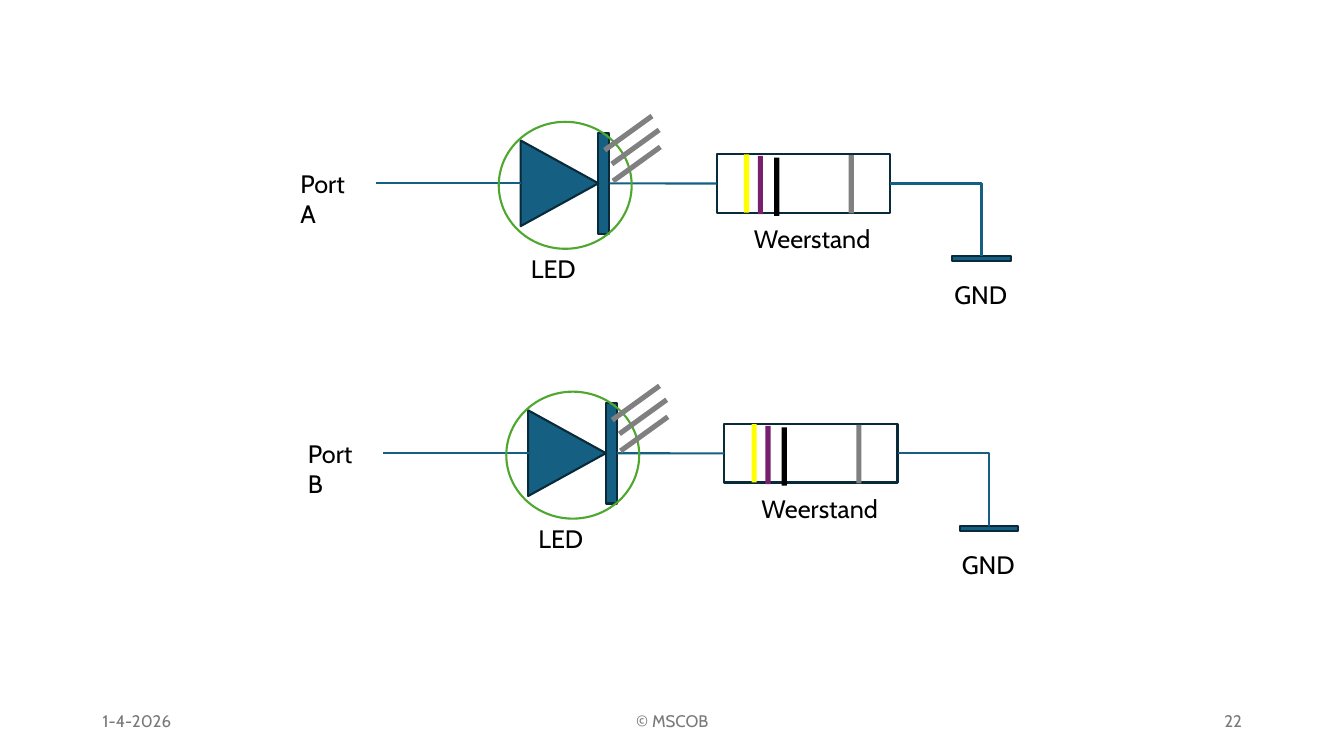
from dataclasses import dataclass

from lxml import etree
from pptx import Presentation
from pptx import util as u
from pptx.dml.color import RGBColor
from pptx.enum import shapes, text
from pptx.oxml.ns import qn


@dataclass(frozen=True)
class Theme:
    font: str = "Cabin"
    label_size: int = 18
    footer_size: int = 12
    stroke: float = 1.5
    body: str = "156082"
    outline: str = "092A39"
    bulb: str = "4EA72E"
    ray: str = "808080"
    ink: str = "000000"
    muted: str = "797979"
    bands: tuple = ("FFFF00", "78206E", "000000", "808080")


THEME = Theme()
SHAPE = shapes.MSO_SHAPE
LINK = shapes.MSO_CONNECTOR
ALIGN = text.PP_ALIGN
ANCHOR = text.MSO_ANCHOR
BAND_POSITIONS = ((18.75, 3.89), (19.1, 3.93), (19.51, 3.97), (21.39, 3.91))
RAY_POSITIONS = ((15.77, 2.62), (15.95, 2.97), (15.98, 3.4))
STRIPE_SIZE = (0.13, 1.47)
WIRE_Y = 4.62


def add_part(slide, kind, left, top, width, height, fill=None, outline=None, turn=0):
    part = slide.shapes.add_shape(kind, u.Cm(left), u.Cm(top), u.Cm(width), u.Cm(height))
    part.shadow.inherit = False
    part.rotation = turn
    if fill:
        part.fill.solid()
        part.fill.fore_color.rgb = RGBColor.from_string(fill)
    else:
        part.fill.background()
    if outline:
        part.line.color.rgb = RGBColor.from_string(outline)
        part.line.width = u.Pt(THEME.stroke)
    else:
        part.line.fill.background()
    return part


def add_wire(slide, start, end, kind=LINK.STRAIGHT):
    wire = slide.shapes.add_connector(kind, *(u.Cm(v) for v in (*start, *end)))
    wire.line.color.rgb = RGBColor.from_string(THEME.body)
    wire.line.width = u.Pt(THEME.stroke)
    properties = wire._element.spPr
    etree.SubElement(properties, qn("a:effectLst"))
    if kind == LINK.ELBOW:
        properties.find(qn("a:prstGeom")).set("prst", "bentConnector2")
    return wire


def add_label(slide, wording, left, top, width, size=THEME.label_size, color=THEME.ink,
              wrap=True, align=ALIGN.LEFT, anchor=ANCHOR.TOP):
    label = slide.shapes.add_textbox(u.Cm(left), u.Cm(top), u.Cm(width), u.Cm(1.02))
    frame = label.text_frame
    frame.text = wording
    frame.word_wrap = wrap
    frame.vertical_anchor = anchor
    paragraph = frame.paragraphs[0]
    paragraph.alignment = align
    font = paragraph.runs[0].font
    font.name = THEME.font
    font.size = u.Pt(size)
    font.color.rgb = RGBColor.from_string(color)


def add_circuit(slide, port, port_wraps, dx, dy):
    wire_y = WIRE_Y + dy
    cathode = add_part(slide, SHAPE.RECTANGLE, 15.08 + dx, 3.35 + dy, 0.28, 2.54,
                       THEME.body, THEME.outline)
    add_part(slide, SHAPE.ISOSCELES_TRIANGLE, 13.02 + dx, 3.64 + dy, 2.16, 1.96,
             THEME.body, THEME.outline, 90)
    resistor = add_part(slide, SHAPE.RECTANGLE, 18.06 + dx, 3.89 + dy, 4.37, 1.47,
                        outline=THEME.outline)
    ground = add_part(slide, SHAPE.RECTANGLE, 24 + dx, 6.46 + dy, 1.47, 0.13,
                      THEME.body, THEME.outline)

    add_wire(slide, (9.47 + dx, wire_y), (13.13 + dx, wire_y))
    led_wire = add_wire(slide, (15.36 + dx, wire_y), (18.06 + dx, wire_y))
    led_wire.begin_connect(cathode, 3)
    led_wire.end_connect(resistor, 1)
    ground_wire = add_wire(slide, (22.43 + dx, wire_y), (24.73 + dx, 6.46 + dy), LINK.ELBOW)
    ground_wire.begin_connect(resistor, 3)
    ground_wire.end_connect(ground, 0)

    add_label(slide, port, 7.32 + dx, 4.11 + dy, 2.13, wrap=port_wraps)
    add_label(slide, "GND", 23.8 + dx, 6.91 + dy, 1.85, wrap=False)
    add_label(slide, "LED", 13.13 + dx, 6.27 + dy, 1.85)
    add_label(slide, "Weerstand", 18.75 + dx, 5.51 + dy, 3.99)

    for (left, top), color in zip(BAND_POSITIONS, THEME.bands):
        add_part(slide, SHAPE.RECTANGLE, left + dx, top + dy, *STRIPE_SIZE, color)
    add_part(slide, SHAPE.OVAL, 12.57 + dx, 3.07 + dy, 3.35, 3.2, outline=THEME.bulb)
    for left, top in RAY_POSITIONS:
        add_part(slide, SHAPE.RECTANGLE, left + dx, top + dy, *STRIPE_SIZE, THEME.ray, turn=54.2)


def add_footer(slide):
    for wording, left, width, align in (
        ("1-4-2026", 2.34, 7.62, ALIGN.LEFT),
        ("© MSCOB", 11.23, 11.43, ALIGN.CENTER),
        ("22", 23.93, 7.62, ALIGN.RIGHT),
    ):
        add_label(slide, wording, left, 17.65, width, THEME.footer_size, THEME.muted,
                  align=align, anchor=ANCHOR.MIDDLE)


def main():
    deck = Presentation()
    deck.slide_width, deck.slide_height = u.Cm(33.87), u.Cm(19.05)
    slide = deck.slides.add_slide(deck.slide_layouts[6])
    add_circuit(slide, "Port A", True, 0, 0)
    add_circuit(slide, "Port B", False, 0.19, 6.8)
    add_footer(slide)
    deck.save("out.pptx")


if __name__ == "__main__":
    main()
